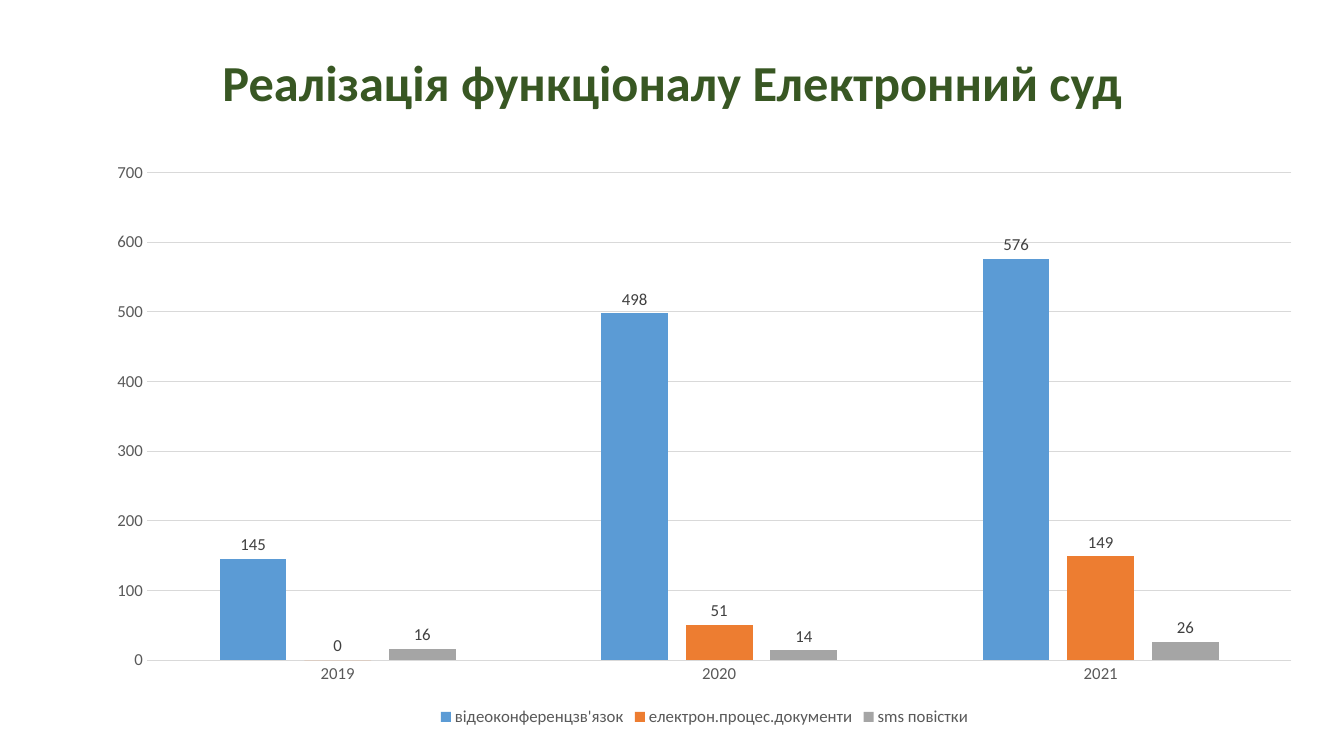
from dataclasses import dataclass

from pptx import Presentation
from pptx import util as u
from pptx.chart.data import CategoryChartData
from pptx.dml.color import RGBColor
from pptx.enum import chart as ch, text

SLIDE_W, SLIDE_H = 1344, 756
EMU_PER_PX = 12192000 / SLIDE_W


@dataclass(frozen=True)
class Theme:
    font: str = "Calibri"
    title_size: int = 36
    chart_size: int = 12
    background: str = "FFFFFF"
    title: str = "385723"
    axis_text: str = "595959"
    label_text: str = "404040"
    rule: str = "D9D9D9"
    rule_width: float = 0.75
    bars: tuple = ("5B9BD5", "ED7D31", "A5A5A5")


THEME = Theme()
YEARS = ["2019", "2020", "2021"]
SERVICES = {
    "відеоконференцзв'язок": (145, 498, 576),
    "електрон.процес.документи": (0, 51, 149),
    "sms повістки": (16, 14, 26),
}


def px(length):
    return u.Emu(round(length * EMU_PER_PX))


def color(value):
    return RGBColor.from_string(value)


def style_font(font, size, shade, bold=False):
    font.name = THEME.font
    font.size = u.Pt(size)
    font.bold = bold
    font.color.rgb = color(shade)


def write(frame, content, *, size, shade, bold=False, align=text.PP_ALIGN.CENTER,
          anchor=text.MSO_ANCHOR.MIDDLE, line_spacing=0.9):
    frame.word_wrap = True
    frame.auto_size = text.MSO_AUTO_SIZE.NONE
    frame.vertical_anchor = anchor
    paragraph = frame.paragraphs[0]
    paragraph.alignment = align
    paragraph.line_spacing = line_spacing
    run = paragraph.add_run()
    run.text = content
    style_font(run.font, size, shade, bold)


def rule(line):
    line.color.rgb = color(THEME.rule)
    line.width = u.Pt(THEME.rule_width)


def place_title(slide, left, top, width, height):
    heading = slide.shapes.title
    heading.left, heading.top = px(left), px(top)
    heading.width, heading.height = px(width), px(height)
    write(heading.text_frame, "Реалізація функціоналу Електронний суд",
          size=THEME.title_size, shade=THEME.title, bold=True)


def style_axes(chart):
    years, counts = chart.category_axis, chart.value_axis
    for axis in (years, counts):
        axis.major_tick_mark = axis.minor_tick_mark = ch.XL_TICK_MARK.NONE
        style_font(axis.tick_labels.font, THEME.chart_size, THEME.axis_text)
    rule(years.format.line)
    counts.format.line.fill.background()
    counts.minimum_scale, counts.maximum_scale = 0, 700
    counts.major_unit = 100
    counts.has_major_gridlines = True
    rule(counts.major_gridlines.format.line)


def place_services_chart(slide, left, top, width, height):
    data = CategoryChartData()
    data.categories = YEARS
    for service, counts in SERVICES.items():
        data.add_series(service, counts)
    chart = slide.shapes.add_chart(
        ch.XL_CHART_TYPE.COLUMN_CLUSTERED,
        px(left), px(top), px(width), px(height), data).chart
    style_font(chart.font, THEME.chart_size, THEME.axis_text)
    chart.has_title = False
    style_axes(chart)

    # Bars and their values
    plot = chart.plots[0]
    plot.vary_by_categories = False
    plot.gap_width, plot.overlap = 219, -27
    for bars, shade in zip(plot.series, THEME.bars):
        bars.format.fill.solid()
        bars.format.fill.fore_color.rgb = color(shade)
        bars.invert_if_negative = False
        labels = bars.data_labels
        labels.show_value = True
        labels.position = ch.XL_LABEL_POSITION.OUTSIDE_END
        style_font(labels.font, THEME.chart_size, THEME.label_text)

    # Legend
    chart.has_legend = True
    chart.legend.position = ch.XL_LEGEND_POSITION.BOTTOM
    chart.legend.include_in_layout = False
    style_font(chart.legend.font, THEME.chart_size, THEME.axis_text)


def main():
    deck = Presentation()
    deck.slide_width, deck.slide_height = px(SLIDE_W), px(SLIDE_H)
    slide = deck.slides.add_slide(deck.slide_layouts[5])
    slide.background.fill.solid()
    slide.background.fill.fore_color.rgb = color(THEME.background)
    place_title(slide, 93, 40, 1159, 91)
    place_services_chart(slide, 93, 151, 1223, 580)
    deck.save("out.pptx")


if __name__ == "__main__":
    main()
